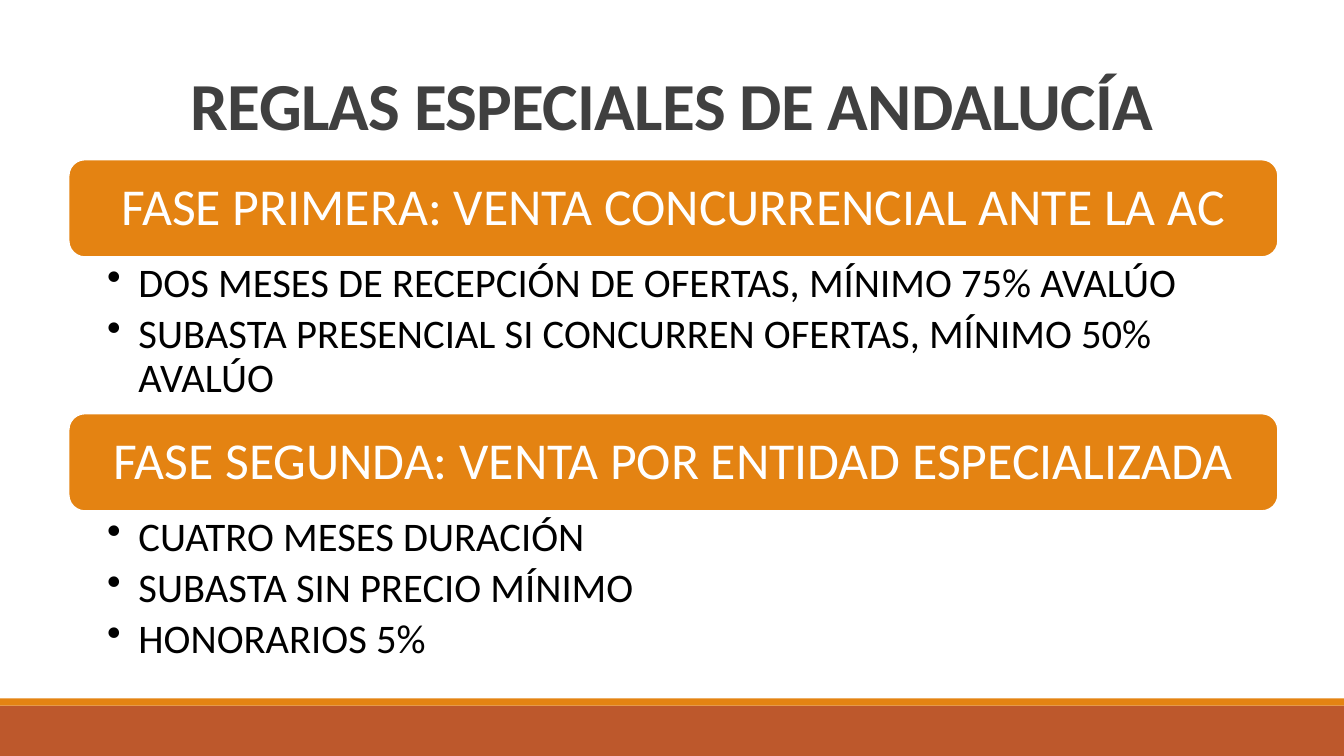
from dataclasses import dataclass

from lxml import etree
from pptx import Presentation
from pptx.dml.color import RGBColor
from pptx.enum.shapes import MSO_SHAPE
from pptx.enum.text import MSO_ANCHOR, PP_ALIGN
from pptx.oxml.ns import qn
from pptx.util import Cm, Pt

RECTANGLE = MSO_SHAPE.RECTANGLE
ROUNDED = MSO_SHAPE.ROUNDED_RECTANGLE
CENTER = PP_ALIGN.CENTER
MIDDLE, BOTTOM = MSO_ANCHOR.MIDDLE, MSO_ANCHOR.BOTTOM


@dataclass(frozen=True)
class Theme:
    font: str = "Calibri"
    orange: RGBColor = RGBColor(0xE4, 0x83, 0x12)
    rust: RGBColor = RGBColor(0xBD, 0x58, 0x2C)
    gray: RGBColor = RGBColor(0x40, 0x40, 0x40)
    white: RGBColor = RGBColor(0xFF, 0xFF, 0xFF)
    black: RGBColor = RGBColor(0, 0, 0)
    title_size: Pt = Pt(48)
    phase_size: Pt = Pt(37)
    bullet_size: Pt = Pt(29)


theme = Theme()

PHASES = [
    ("FASE PRIMERA: VENTA CONCURRENCIAL ANTE LA AC",
     ["DOS MESES DE RECEPCIÓN DE OFERTAS, MÍNIMO 75% AVALÚO",
      "SUBASTA PRESENCIAL SI CONCURREN OFERTAS, MÍNIMO 50% AVALÚO"]),
    ("FASE SEGUNDA: VENTA POR ENTIDAD ESPECIALIZADA",
     ["CUATRO MESES DURACIÓN",
      "SUBASTA SIN PRECIO MÍNIMO",
      "HONORARIOS 5%"]),
]


def add_filled(kind, left, top, width, height, color):
    shape = slide.shapes.add_shape(kind, Cm(left), Cm(top), Cm(width), Cm(height))
    shape.shadow.inherit = False
    shape.fill.solid()
    shape.fill.fore_color.rgb = color
    shape.line.fill.background()
    return shape


def style_paragraph(paragraph, text, size, color, spacing):
    paragraph.text = text
    paragraph.line_spacing = spacing
    paragraph.font.name = theme.font
    paragraph.font.size = size
    paragraph.font.color.rgb = color


presentation = Presentation()
presentation.slide_width, presentation.slide_height = Cm(33.87), Cm(19.05)
slide = presentation.slides.add_slide(presentation.slide_layouts[6])

# Footer bands
add_filled(RECTANGLE, 0, 17.78, 33.87, 1.27, theme.rust)
add_filled(RECTANGLE, 0, 17.6, 33.87, 0.18, theme.orange)

# Title
title = slide.shapes.add_textbox(Cm(1.7), Cm(0.76), Cm(30.48), Cm(3))
title.text_frame.word_wrap = True
title.text_frame.vertical_anchor = BOTTOM
paragraph = title.text_frame.paragraphs[0]
style_paragraph(paragraph, "REGLAS ESPECIALES DE ANDALUCÍA",
                theme.title_size, theme.gray, 0.85)
paragraph.alignment = CENTER
paragraph.font.bold = True
paragraph.runs[0].font._element.set("spc", "-50")

# Phases: a heading bar with its bullets below
LEFT, WIDTH = 1.73, 30.48
FIRST_TOP, PHASE_STEP, BAR_HEIGHT = 4.02, 6.4, 2.46

for index, (heading, bullets) in enumerate(PHASES):
    top = FIRST_TOP + index * PHASE_STEP
    bar = add_filled(ROUNDED, LEFT, top, WIDTH, BAR_HEIGHT, theme.orange)
    bar.line.color.rgb = theme.white
    bar.line.width = Pt(1.25)
    frame = bar.text_frame
    frame.word_wrap = True
    frame.vertical_anchor = MIDDLE
    style_paragraph(frame.paragraphs[0], heading, theme.phase_size, theme.white, 0.9)
    frame.paragraphs[0].alignment = CENTER

    body = slide.shapes.add_textbox(Cm(LEFT), Cm(top + BAR_HEIGHT),
                                    Cm(WIDTH), Cm(PHASE_STEP - BAR_HEIGHT))
    frame = body.text_frame
    frame.word_wrap = True
    frame.margin_left, frame.margin_right = Cm(0.97), Cm(0.74)
    for number, bullet in enumerate(bullets):
        paragraph = frame.add_paragraph() if number else frame.paragraphs[0]
        style_paragraph(paragraph, bullet, theme.bullet_size, theme.black, 0.9)
        paragraph.space_after = Pt(5.3)
        properties = paragraph._p.get_or_add_pPr()
        properties.set("marL", str(Cm(0.79)))
        properties.set("indent", str(-Cm(0.79)))
        bullet_mark = etree.Element(qn("a:buChar"), char="•")
        properties.find(qn("a:defRPr")).addprevious(bullet_mark)

presentation.save("out.pptx")
